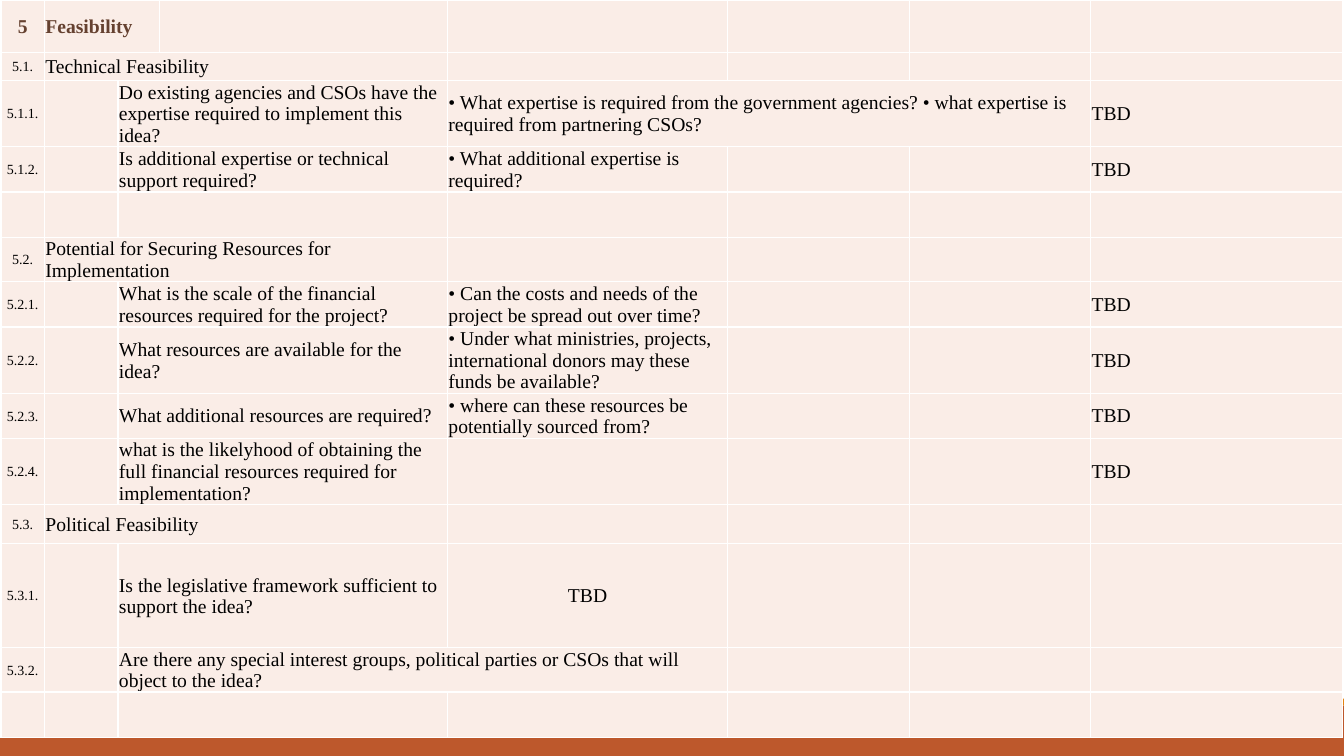
from lxml import etree
from pptx import Presentation
from pptx.dml.color import RGBColor
from pptx.enum.shapes import MSO_SHAPE
from pptx.enum.text import MSO_ANCHOR, PP_ALIGN
from pptx.oxml.ns import qn
from pptx.util import Pt

RECT = MSO_SHAPE.RECTANGLE
MIDDLE = MSO_ANCHOR.MIDDLE
LEFT, CENTER = PP_ALIGN.LEFT, PP_ALIGN.CENTER

# Each row: height, then cells as (column, columns spanned, text)
ROWS = [
    (37.4, [(0, 1, "5"), (1, 2, "Feasibility")]),
    (20.2, [(0, 1, "5.1."), (1, 3, "Technical Feasibility")]),
    (32.4, [(0, 1, "5.1.1."),
            (2, 2, "Do existing agencies and CSOs have the expertise required to implement this idea?"),
            (4, 3, "• What expertise is required from the government agencies? "
                   "• what expertise is required from partnering CSOs?"),
            (7, 1, "TBD")]),
    (32.4, [(0, 1, "5.1.2."),
            (2, 2, "Is additional expertise or technical support required?"),
            (4, 1, "• What additional expertise is required?"),
            (7, 1, "TBD")]),
    (32.4, [(2, 2, "")]),
    (23, [(0, 1, "5.2."), (1, 3, "Potential for Securing Resources for Implementation")]),
    (32.4, [(0, 1, "5.2.1."),
            (2, 2, "What is the scale of the financial resources required for the project?"),
            (4, 1, "• Can the costs and needs of the project be spread out over time?"),
            (7, 1, "TBD")]),
    (45.4, [(0, 1, "5.2.2."),
            (2, 2, "What resources are available for the idea?"),
            (4, 1, "• Under what ministries, projects, international donors may these funds be available?"),
            (7, 1, "TBD")]),
    (32.4, [(0, 1, "5.2.3."),
            (2, 2, "What additional resources are required?"),
            (4, 1, "• where can these resources be potentially sourced from?"),
            (7, 1, "TBD")]),
    (45.4, [(0, 1, "5.2.4."),
            (2, 2, "what is the likelyhood of obtaining the full financial resources "
                   "required for implementation?"),
            (7, 1, "TBD")]),
    (28.1, [(0, 1, "5.3."), (1, 3, "Political Feasibility")]),
    (74.2, [(0, 1, "5.3.1."),
            (2, 2, "Is the legislative framework sufficient to support the idea?"),
            (4, 1, "TBD")]),
    (30.2, [(0, 1, "5.3.2."),
            (2, 3, "Are there any special interest groups, political parties or CSOs "
                   "that will object to the idea?")]),
    (32.4, [(2, 2, "")]),
]
COLS = [31, 52.6, 29.5, 205.9, 200.2, 129.6, 129.6, 180]
WIDE, HIGH = 960, 540
BANDS = [(504, 36, "rust"), (499, 5, "amber")]
TABLE_X, TABLE_H = 0.72, 547.2

THEME = {
    "font": "Times New Roman", "body": 14, "small": 10, "rule": 1, "inset": 0.72,
    "rust": "BD582C", "amber": "E48312", "cell": "FAEDE7",
    "line": "FFFFFF", "head": "654130", "text": "000000",
}


def color(name):
    return RGBColor.from_string(THEME[name])


def add_bands(slide):
    for top, height, name in BANDS:
        band = slide.shapes.add_shape(RECT, 0, Pt(top), Pt(WIDE), Pt(height))
        band.shadow.inherit = False
        band.fill.solid()
        band.fill.fore_color.rgb = color(name)
        band.line.fill.background()


def style_cell(cell):
    """Set borders, fill, insets and the type size of an empty cell."""
    props = cell._tc.get_or_add_tcPr()
    for side in ("lnL", "lnR", "lnT", "lnB"):
        line = etree.SubElement(props, qn("a:" + side), w=str(Pt(THEME["rule"])))
        fill = etree.SubElement(line, qn("a:solidFill"))
        etree.SubElement(fill, qn("a:srgbClr"), val=THEME["line"])
    cell.fill.solid()
    cell.fill.fore_color.rgb = color("cell")
    cell.vertical_anchor = MIDDLE
    cell.margin_left = cell.margin_right = cell.margin_top = Pt(THEME["inset"])
    cell.margin_bottom = 0
    para = cell.text_frame.paragraphs[0]
    etree.SubElement(para._p, qn("a:endParaRPr"), sz=str(THEME["small"] * 100))


def write(cell, text, head, label, align):
    para = cell.text_frame.paragraphs[0]
    para.alignment = align
    run = para.add_run()
    run.text = text
    run.font.name = THEME["font"]
    run.font.size = Pt(THEME["small" if label and not head else "body"])
    run.font.bold = head
    run.font.color.rgb = color("head" if head else "text")


def add_grid(slide):
    frame = slide.shapes.add_table(len(ROWS), len(COLS), Pt(TABLE_X), 0,
                                   Pt(sum(COLS)), Pt(TABLE_H))
    table = frame.table
    table.first_row = table.horz_banding = False
    for col, width in zip(table.columns, COLS):
        col.width = Pt(width)
    for cell in table.iter_cells():
        style_cell(cell)
    for row, (height, items) in enumerate(ROWS):
        table.rows[row].height = Pt(height)
        for col, span, text in items:
            cell = table.cell(row, col)
            if span > 1:
                cell.merge(table.cell(row, col + span - 1))
            if text:
                mid = col == 0 or (col == 4 and text == "TBD")
                write(cell, text, row == 0, col == 0, CENTER if mid else LEFT)
    frame.height = Pt(TABLE_H)


def main():
    deck = Presentation()
    deck.slide_width, deck.slide_height = Pt(WIDE), Pt(HIGH)
    slide = deck.slides.add_slide(deck.slide_layouts[6])
    add_bands(slide)
    add_grid(slide)
    deck.save("out.pptx")


if __name__ == "__main__":
    main()
